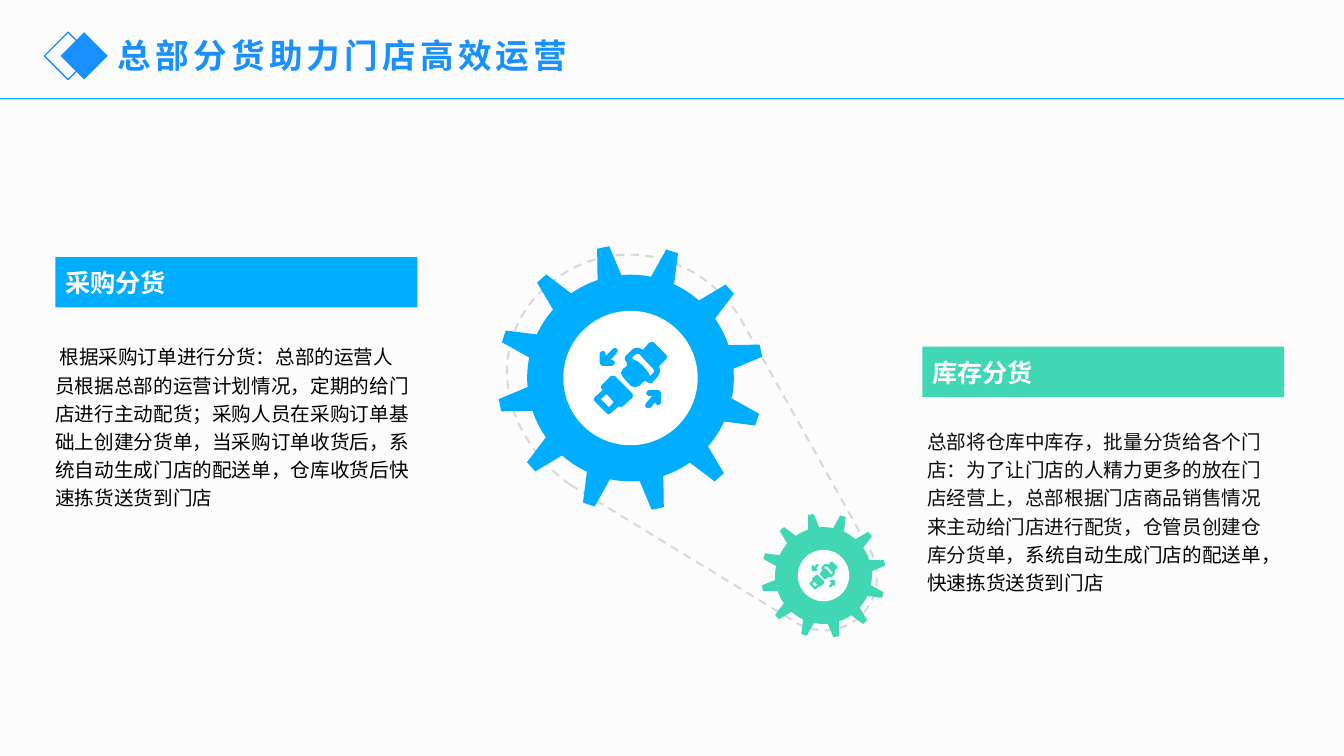
import dataclasses
import math

import pptx
import pptx.dml.color
import pptx.enum.dml
import pptx.enum.shapes
import pptx.enum.text
import pptx.oxml
import pptx.oxml.ns
import pptx.util

COLS, ROWS = 160, 90
CELL = pptx.util.Inches(7.5) / ROWS
SHAPE = pptx.enum.shapes.MSO_SHAPE
ANCHOR = pptx.enum.text.MSO_ANCHOR


@dataclasses.dataclass(frozen=True)
class Theme:
    font: str = "Noto Sans CJK SC"
    back: str = "FCFCFC"
    title: str = "1890FF"
    blue: str = "00ADFF"
    green: str = "41D7B4"
    white: str = "FFFFFF"
    black: str = "000000"
    ink: str = "0D0D0D"
    belt: str = "D9D9D9"
    title_size: int = 24
    head_size: int = 18
    body_size: int = 14


THEME = Theme()

BUY = [("根据采购订单进行分货：总部的运营人员根据总部的运营计划情况，定期的给门店进行主动配货；"
        "采购人员在采购订单基础上创建分货单，当采购订单收货后，系统自动生成门店的配送单，"
        "仓库收货后快速拣货送货到门店", THEME.black)]
STOCK = [("总部将仓库中库存，批量分货给各个门店：为了让门店的人精力更多的放在门店经营上，"
          "总部根据门店商品销售情况来主动给门店进行配货，仓管员创建仓库分货单，", THEME.ink),
         ("系统自动生成门店的配送单，快速拣货送货到门店", THEME.black)]

# Belt outline in cells: two points make a line, six numbers make a curve.
BELT = [(7.92, 28.72), (34.44, 44.92),
        (37.08, 46.72, 40.56, 46.36, 42.72, 44.08),
        (44.64, 41.92, 45, 38.8, 43.44, 36.28), (28.08, 8.8),
        (26.76, 6.64, 24.96, 4.96, 22.92, 3.64),
        (20.88, 2.44, 18.6, 1.6, 16.2, 1.36),
        (12, 1, 7.8, 2.44, 4.68, 5.44),
        (1.8, 8.08, 0.24, 11.8, 0.36, 15.76),
        (0.48, 18.4, 1.32, 20.92, 2.64, 23.08),
        (3.96, 25.24, 5.64, 27.16, 7.92, 28.72)]

# Buckle icon on a 73 by 72 grid, outlines and their windows.
ICON_MID = 36.5, 36
ICON = [
    [(13, 52), (7, 57), (15, 65), (20, 60)],
    [(55, 48), (64, 48), (66, 49), (67, 51), (67, 60), (66, 62), (64, 63),
     (62, 62), (61, 60), (57, 65), (55, 66), (53, 66), (51, 64), (52, 61),
     (58, 54), (55, 54), (53, 53), (52, 51), (53, 49)],
    [(19, 34), (21, 34), (38, 51), (39, 53), (38, 56), (29, 64), (27, 65),
     (25, 64), (17, 71), (15, 72), (13, 71), (1, 59), (0, 57), (1, 55),
     (9, 48), (8, 47), (7, 45), (8, 43), (17, 34)],
    [(44, 12), (42, 12), (38, 16), (40, 18), (43, 19), (49, 24), (53, 29),
     (55, 32), (56, 34), (60, 30), (60, 28), (45, 12)],
    [(21, 6), (23, 7), (24, 9), (23, 11), (17, 18), (18, 18), (20, 19),
     (21, 21), (20, 23), (18, 24), (9, 24), (7, 23), (6, 21), (6, 12),
     (7, 10), (9, 9), (11, 10), (12, 12), (12, 14), (19, 7)],
    [(58, 0), (60, 1), (72, 13), (73, 15), (72, 17), (65, 24), (66, 29),
     (64, 34), (58, 41), (55, 41), (51, 39), (49, 40), (45, 44), (41, 45),
     (37, 44), (29, 35), (27, 31), (29, 27), (33, 24), (33, 21), (31, 18),
     (31, 15), (32, 14), (38, 8), (41, 6), (45, 6), (49, 8), (55, 1)],
]


def cells(*spans):
    return [round(span * CELL) for span in spans]


def color(code):
    return pptx.dml.color.RGBColor.from_string(code)


def paint(shape, fill=None, line=None, width=1):
    shape.shadow.inherit = False
    if fill:
        shape.fill.solid()
        shape.fill.fore_color.rgb = color(fill)
    else:
        shape.fill.background()
    if line:
        shape.line.color.rgb = color(line)
        shape.line.width = pptx.util.Pt(width)
    else:
        shape.line.fill.background()
    return shape


def add_run(para, text, size, ink, bold=False):
    run = para.add_run()
    run.text = text
    run.font.size = pptx.util.Pt(size)
    run.font.bold = bold
    run.font.color.rgb = color(ink)
    run.font.name = THEME.font
    east = pptx.oxml.ns.qn("a:ea")
    run.font._element.append(run.font._element.makeelement(east, {"typeface": THEME.font}))
    return run


def outline(shapes, paths):
    """Draw closed paths, given in cells, as one freeform."""
    pen = None
    for path in paths:
        dots = [cells(*dot) for dot in path]
        if pen is None:
            pen = shapes.build_freeform(*dots[0], scale=1.0)
        else:
            pen.move_to(*dots[0])
        pen.add_line_segments(dots[1:], close=True)
    return pen.convert_to_shape()


def trace(steps, count=12):
    """Turn lines and cubic curves into a list of points."""
    dots = []
    for step in steps:
        if len(step) == 2:
            dots.append(step)
            continue
        knots = [dots[-1], step[:2], step[2:4], step[4:]]
        for part in range(1, count + 1):
            t = part / count
            loads = [math.comb(3, k) * t ** k * (1 - t) ** (3 - k) for k in range(4)]
            dots.append(tuple(sum(w * knot[axis] for w, knot in zip(loads, knots))
                              for axis in (0, 1)))
    return dots


def disc(shapes, x, y, size, fill):
    paint(shapes.add_shape(SHAPE.OVAL, *cells(x - size, y - size, 2 * size, 2 * size)), fill)


def gear(slide, x, y, size, hole, fill):
    """Place a gear by its centre, body radius and hole radius."""
    shapes = slide.shapes.add_group_shape().shapes
    disc(shapes, x, y, size, fill)
    disc(shapes, x, y, hole, THEME.white)
    tooth = [(-0.06, 1.29), (-0.12, 0.98), (0.12, 0.98), (0.06, 1.29)]
    for turn in range(12):
        angle = math.radians(18.2 + 30 * turn)
        sin, cos = math.sin(angle), math.cos(angle)
        path = [(x + size * (side * cos + out * sin), y + size * (side * sin - out * cos))
                for side, out in tooth]
        paint(outline(shapes, [path]), fill)
    unit = hole * 0.015
    mid_x, mid_y = ICON_MID
    icon = [[(x + (a - mid_x) * unit, y + (b - mid_y) * unit) for a, b in path]
            for path in ICON]
    paint(outline(shapes, icon), fill)


def drive(slide, x, y):
    """Two gears joined by a dashed belt, from the top left corner."""
    path = [(x + a, y + b) for a, b in trace(BELT)]
    belt = paint(outline(slide.shapes, [path]), line=THEME.belt, width=1.5)
    belt.line.dash_style = pptx.enum.dml.MSO_LINE.DASH
    gear(slide, x + 15.06, y + 16, 12.3, 8, THEME.blue)
    gear(slide, x + 38.04, y + 39.52, 5.76, 3.06, THEME.green)


def header(slide, x, y, text):
    rule = slide.shapes.add_connector(
        pptx.enum.shapes.MSO_CONNECTOR.STRAIGHT, *cells(0, 11.76, COLS, 11.76))
    rule.line.color.rgb = color(THEME.blue)
    rule.line.width = pptx.util.Pt(1)
    rule._element.spPr.append(pptx.oxml.parse_xml(
        "<a:effectLst %s/>" % pptx.oxml.ns.nsdecls("a")))
    for shift, fill, line in ((0, None, THEME.title), (1.92, THEME.title, None)):
        gem = slide.shapes.add_shape(SHAPE.DIAMOND, *cells(x + shift, y, 5.64, 5.64))
        paint(gem, fill, line)
    title = slide.shapes.title
    title.left, title.top, title.width, title.height = cells(x + 7.56, y - 0.24, 62.4, 6)
    frame = title.text_frame
    frame.auto_size = pptx.enum.text.MSO_AUTO_SIZE.NONE
    frame.vertical_anchor = ANCHOR.MIDDLE
    para = frame.paragraphs[0]
    para.alignment = pptx.enum.text.PP_ALIGN.LEFT
    run = add_run(para, text, THEME.title_size, THEME.title, True)
    run.font._element.set("spc", "300")


def panel(slide, x, y, fill, head, runs, note, indent=0):
    """A heading bar, with a note whose box is given relative to the bar."""
    bar = paint(slide.shapes.add_shape(SHAPE.RECTANGLE, *cells(x, y, 43.08, 6)), fill)
    bar.text_frame.vertical_anchor = ANCHOR.MIDDLE
    para = bar.text_frame.paragraphs[0]
    para.alignment = pptx.enum.text.PP_ALIGN.LEFT
    add_run(para, head, THEME.head_size, THEME.white, True)

    left, top, width, height = note
    body = slide.shapes.add_textbox(*cells(x + left, y + top, width, height))
    body.text_frame.word_wrap = True
    para = body.text_frame.paragraphs[0]
    para.line_spacing = 1.2
    para._p.get_or_add_pPr().set("indent", str(cells(indent)[0]))
    for text, ink in runs:
        add_run(para, text, THEME.body_size, ink)


def main():
    deck = pptx.Presentation()
    deck.slide_width, deck.slide_height = cells(COLS, ROWS)
    slide = deck.slides.add_slide(deck.slide_layouts.get_by_name("Title Only"))
    slide.background.fill.solid()
    slide.background.fill.fore_color.rgb = color(THEME.back)
    header(slide, 5.28, 3.84, "总部分货助力门店高效运营")
    drive(slide, 60, 29)
    panel(slide, 6.6, 30.6, THEME.blue, "采购分货", BUY, (-1.2, 9.36, 44.76, 21.12), 0.5)
    panel(slide, 109.8, 41.28, THEME.green, "库存分货", STOCK, (-0.6, 8.76, 42.96, 24.48))
    deck.save("out.pptx")


if __name__ == "__main__":
    main()
